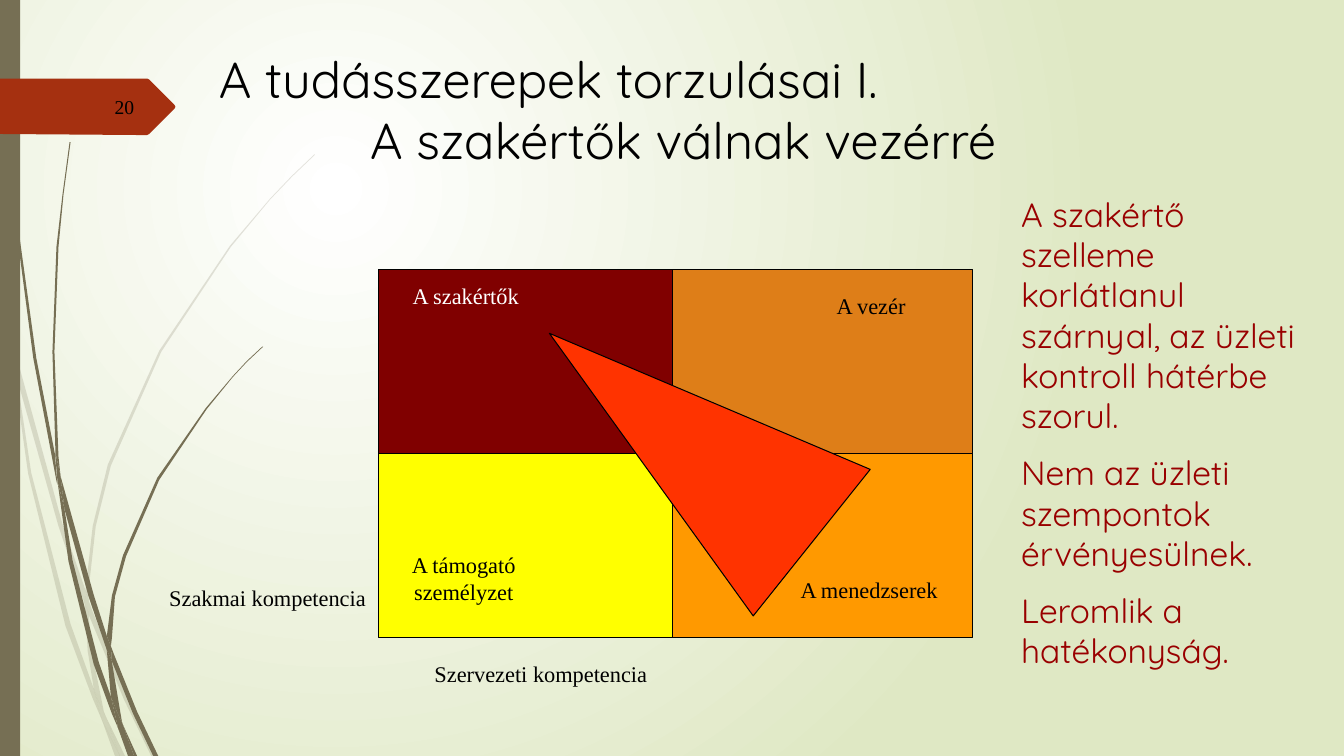
from dataclasses import dataclass

from lxml.etree import SubElement
from pptx import Presentation
from pptx.dml.color import RGBColor
from pptx.enum.shapes import MSO_SHAPE as Preset
from pptx.enum.text import MSO_ANCHOR as Anchor, MSO_AUTO_SIZE as AutoSize, PP_ALIGN as Align
from pptx.oxml.ns import qn
from pptx.util import Inches, Pt


@dataclass(frozen=True)
class Theme:
    heading_font: str = "Quicksand"
    label_font: str = "Times New Roman"
    title_size: int = 36
    body_size: int = 24
    label_size: int = 16
    number_size: int = 14
    black: str = "000000"
    white: str = "FFFFFF"
    backdrop: str = "DFE8C4"
    stem: str = "766F54"
    ribbon: str = "A53010"
    message: str = "990000"
    expert: str = "800000"
    leader: str = "DE7E18"
    support: str = "FFFF00"
    manager: str = "FF9900"
    distortion: str = "FF3300"


PALE_STEMS = [
    [(0.11, 3.5), (0.09, 3.22), (0, 2.82), (0, 2.99), (0.1, 3.44)],
    [(0.58, 5.22), (0.84, 5.99), (0.85, 5.86), (0.62, 5.2), (0.14, 3.45), (0.17, 3.76)],
    [(0.92, 6.07), (0.88, 5.96), (0.88, 6.1), (1.23, 6.94), (1.5, 7.5), (1.55, 7.5), (1.27, 6.92)],
    [(1.19, 7.5), (1.24, 7.5), (1.05, 7.11)],
    [(0.93, 6.83), (0.7, 6.19), (0.31, 4.69), (0.17, 3.76), (0.11, 3.5), (0.28, 4.7),
     (0.65, 6.21), (0.92, 6.93), (1.01, 7.14), (0.99, 7.07)],
    [(0.84, 5.99), (0.87, 6.46), (0.93, 6.83), (0.96, 6.92), (1.05, 7.11), (1.03, 7.06),
     (0.91, 6.46), (0.88, 6.1), (0.88, 6.08)],
    [(0.88, 5.84), (0.95, 5.22), (1.1, 4.62), (1.6, 3.49), (2.29, 2.45), (2.68, 1.98),
     (2.9, 1.75), (3.12, 1.54), (3.12, 1.53), (2.89, 1.75), (2.68, 1.97), (2.28, 2.44),
     (1.58, 3.48), (1.07, 4.61), (0.92, 5.22), (0.85, 5.84), (0.85, 5.86), (0.88, 5.96)],
    [(1.01, 7.14), (1.14, 7.5), (1.19, 7.5)],
    [(0.88, 6.08), (0.88, 6.1), (0.88, 5.96), (0.85, 5.86), (0.84, 5.99)],
    [(0.96, 6.92), (0.93, 6.83), (0.99, 7.07), (1.01, 7.14), (1.19, 7.5), (1.05, 7.11)],
]
DARK_STEMS = [
    [(0.07, 1.1), (0.17, 2.33), (0.33, 3.55), (0.56, 4.77), (0.57, 4.81), (0.55, 4.57),
     (0.55, 4.53), (0.36, 3.55), (0.19, 2.32), (0.08, 1.09), (0.05, 0.48), (0.04, 0),
     (0.03, 0), (0.04, 0.48)],
    [(0.88, 5.92), (1.06, 6.45), (1.06, 6.31), (0.93, 5.9), (0.6, 4.72), (0.64, 5.05)],
    [(1.13, 6.49), (1.1, 6.41), (1.11, 6.56), (1.32, 7.08), (1.52, 7.5), (1.57, 7.5), (1.36, 7.06)],
    [(1.1, 6.91), (0.98, 6.57), (0.72, 5.56), (0.64, 5.05), (0.57, 4.77), (0.68, 5.57),
     (0.93, 6.59), (1.11, 7.08), (1.17, 7.22), (1.16, 7.17)],
    [(0.6, 4.72), (0.58, 4.53), (0.54, 3.49), (0.58, 2.45), (0.63, 1.93), (0.7, 1.41),
     (0.69, 1.41), (0.62, 1.93), (0.56, 2.45), (0.52, 3.49), (0.55, 4.49)],
    [(1.33, 7.5), (1.36, 7.5), (1.22, 7.19)],
    [(0.57, 4.77), (0.64, 5.05), (0.6, 4.72), (0.55, 4.49), (0.55, 4.53)],
    [(1.11, 6.33), (1.14, 5.92), (1.25, 5.52), (1.58, 4.76), (2.05, 4.06), (2.31, 3.74),
     (2.45, 3.59), (2.61, 3.44), (2.6, 3.44), (2.45, 3.58), (2.31, 3.73), (2.04, 4.05),
     (1.56, 4.74), (1.22, 5.51), (1.11, 5.91), (1.06, 6.31), (1.1, 6.41)],
    [(1.17, 7.22), (1.27, 7.5), (1.31, 7.5)],
    [(1.06, 6.45), (1.1, 6.91), (1.16, 7.06), (1.22, 7.19), (1.21, 7.16), (1.11, 6.56), (1.09, 6.51)],
    [(1.06, 6.45), (1.09, 6.51), (1.11, 6.56), (1.1, 6.41), (1.06, 6.31)],
    [(1.16, 7.06), (1.1, 6.91), (1.16, 7.17), (1.17, 7.22), (1.3, 7.5), (1.33, 7.5), (1.22, 7.19)],
]
RIBBON = [(0, 0.78), (1.46, 0.78), (1.48, 0.79), (1.73, 1.04), (1.74, 1.06),
          (1.73, 1.08), (1.48, 1.33), (1.46, 1.34), (1.36, 1.34), (0, 1.33)]


def write_text(frame, paragraphs, *, font, size, color, align=Align.LEFT,
               anchor=Anchor.TOP, gap=0, indent=0):
    frame.word_wrap = True
    frame.auto_size = AutoSize.NONE
    frame.vertical_anchor = anchor
    for index, text in enumerate(paragraphs):
        paragraph = frame.paragraphs[0] if index == 0 else frame.add_paragraph()
        paragraph.alignment = align
        paragraph.space_before = Pt(gap if index else 0)
        if index and indent:
            paragraph._p.get_or_add_pPr().set("marL", str(Inches(indent)))
        run = paragraph.add_run()
        run.text = text
        run.font.name = font
        run.font.size = Pt(size)
        run.font.color.rgb = RGBColor.from_string(color)


class SlideBuilder:
    def __init__(self, slide, theme):
        self.slide = slide
        self.theme = theme

    def background(self):
        fill = self.slide.background.fill
        fill.gradient()
        for stop, color, position in zip(fill.gradient_stops,
                                         (self.theme.white, self.theme.backdrop), (0, 1)):
            stop.color.rgb = RGBColor.from_string(color)
            stop.position = position
        gradient = self.slide._element.find(".//" + qn("a:gradFill"))
        gradient.remove(gradient.find(qn("a:lin")))
        circle = SubElement(gradient, qn("a:path"), {"path": "circle"})
        SubElement(circle, qn("a:fillToRect"), l="50000", t="50000", r="100000", b="100000")

    def paint(self, shape, color, outlined=False, alpha=None):
        shape.shadow.inherit = False
        shape.fill.solid()
        shape.fill.fore_color.rgb = RGBColor.from_string(color)
        if outlined:
            shape.line.color.rgb = RGBColor.from_string(self.theme.black)
            shape.line.width = Pt(0.75)
        else:
            shape.line.fill.background()
        if alpha:
            solid = shape._element.spPr.find(qn("a:solidFill"))
            SubElement(solid[0], qn("a:alpha"), val=str(alpha * 1000))

    def outline(self, points, color, shapes=None, alpha=None):
        corners = [(Inches(x), Inches(y)) for x, y in points]
        builder = (shapes or self.slide.shapes).build_freeform(*corners[0], scale=1.0)
        builder.add_line_segments(corners[1:], close=True)
        self.paint(builder.convert_to_shape(), color, alpha=alpha)

    def stems(self, outlines, alpha=None):
        group = self.slide.shapes.add_group_shape()
        for points in outlines:
            self.outline(points, self.theme.stem, group.shapes, alpha)

    def shape(self, preset, box, color, outlined=True, rotation=0):
        shape = self.slide.shapes.add_shape(preset, *map(Inches, box))
        shape.rotation = rotation
        self.paint(shape, color, outlined)

    def title(self, box, lines, indent):
        title = self.slide.shapes.title
        title.left, title.top, title.width, title.height = map(Inches, box)
        write_text(title.text_frame, lines, font=self.theme.heading_font,
                   size=self.theme.title_size, color=self.theme.black, indent=indent)

    def text(self, box, paragraphs, **changes):
        style = dict(font=self.theme.label_font, size=self.theme.label_size,
                     color=self.theme.black, align=Align.CENTER)
        text_box = self.slide.shapes.add_textbox(*map(Inches, box))
        write_text(text_box.text_frame, paragraphs, **(style | changes))


def main():
    theme = Theme()
    presentation = Presentation()
    presentation.slide_width = Inches(13.33)
    presentation.slide_height = Inches(7.5)
    builder = SlideBuilder(presentation.slides.add_slide(presentation.slide_layouts[5]), theme)

    builder.background()
    builder.stems(PALE_STEMS, alpha=20)
    builder.stems(DARK_STEMS)
    builder.shape(Preset.RECTANGLE, (0, 0, 0.2, 7.5), theme.stem, outlined=False)
    builder.outline(RIBBON, theme.ribbon)
    builder.text((0.58, 0.86, 0.85, 0.4), ["20"], size=theme.number_size,
                 align=Align.RIGHT, anchor=Anchor.MIDDLE)
    builder.title((2.07, 0.43, 9.19, 1.25),
                  ["A tudásszerepek torzulásai I.", "A szakértők válnak vezérré"], indent=1.5)

    columns = [(3.75, 2.92), (6.67, 2.98)]
    row_height = 1.83
    quadrants = [[theme.expert, theme.leader], [theme.support, theme.manager]]
    for row, colors in enumerate(quadrants):
        for (left, width), color in zip(columns, colors):
            builder.shape(Preset.RECTANGLE,
                          (left, 2.67 + row * row_height, width, row_height), color)

    builder.text((1.58, 5.75, 2.26, 0.37), ["Szakmai kompetencia"], align=Align.LEFT)
    builder.text((3.83, 6.5, 3.07, 0.37), ["Szervezeti kompetencia"])
    builder.text((3.67, 2.75, 1.9, 0.37), ["A szakértők"], color=theme.white)
    builder.text((3.92, 5.42, 1.36, 0.64), ["A támogató személyzet"])
    builder.text((7.69, 2.85, 1.9, 0.37), ["A vezér"])
    builder.text((7.67, 5.67, 1.9, 0.37), ["A menedzserek"])
    builder.shape(Preset.ISOSCELES_TRIANGLE, (5.82, 2.68, 1.86, 3.33),
                  theme.distortion, rotation=308.6)
    builder.text((10.03, 1.87, 3.16, 4.95),
                 ["A szakértő szelleme korlátlanul szárnyal, az üzleti kontroll hátérbe szorul.",
                  "Nem az üzleti szempontok érvényesülnek.",
                  "Leromlik a hatékonyság."],
                 font=theme.heading_font, size=theme.body_size, color=theme.message,
                 align=Align.LEFT, gap=12)
    presentation.save("out.pptx")


if __name__ == "__main__":
    main()
